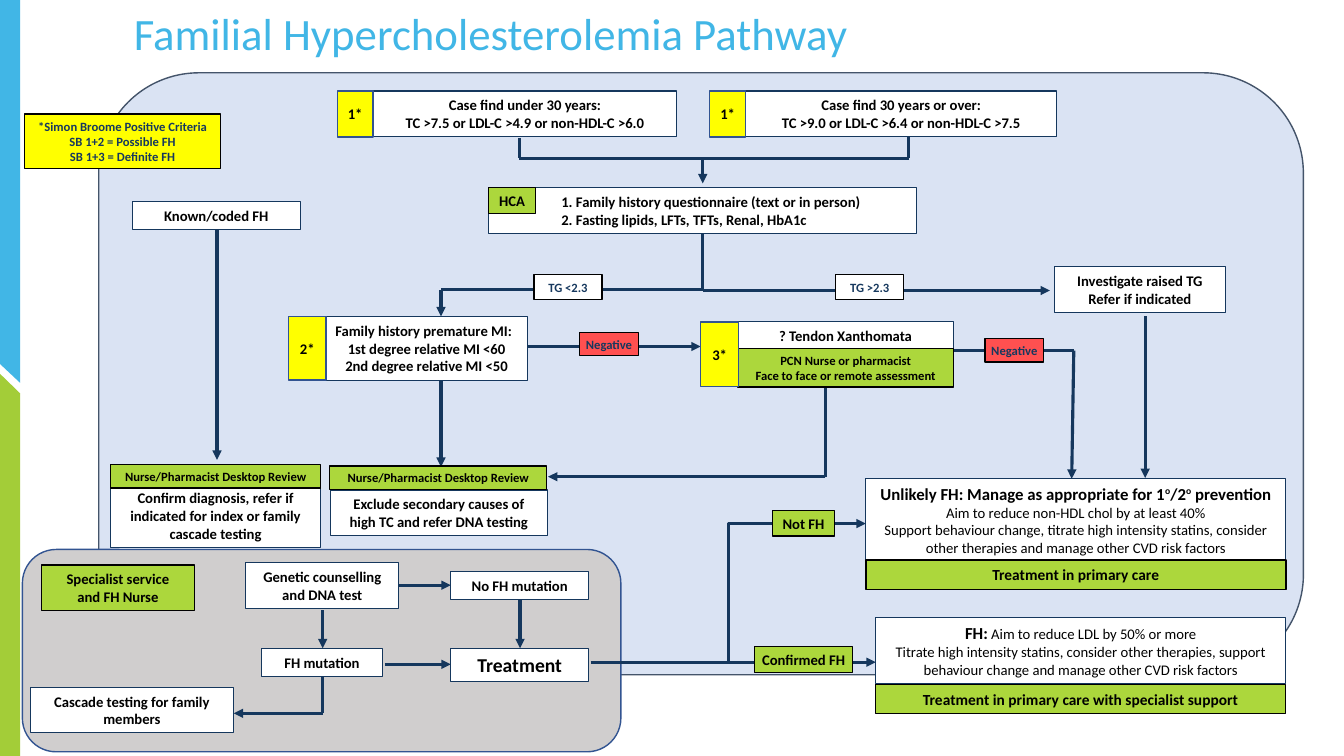
from pptx import Presentation
from pptx.dml.color import RGBColor
from pptx.enum.shapes import MSO_CONNECTOR as LINK, MSO_SHAPE as SHAPE
from pptx.enum.text import MSO_ANCHOR as ANCHOR, PP_ALIGN as ALIGN
from pptx.oxml.ns import qn
from pptx.util import Pt
from lxml.etree import SubElement

COLORS = {
    "white": "FFFFFF", "black": "000000", "sky": "41B6E6", "leaf": "A3CD38",
    "panel": "DAE3F3", "slate": "44546A", "grey": "D0CECE", "blue": "325491",
    "navy": "15375D", "ink": "16385E", "yellow": "FFFF00", "lime": "ACD73C",
    "red": "FF5050",
}

# kind: fill, line, line width, side and top margins, text colour, text size
KINDS = {
    "step": ("white", "navy", 0.75, (7.2, 3.6), "black", 10.5),
    "care": ("lime", "black", 1, (7.2, 3.6), "black", 11),
    "tag": ("lime", "black", 1, (3, 3), "black", 10.5),
    "role": ("lime", "black", 1, (3, 3), "black", 9),
    "key": ("yellow", "black", 1, (3, 3), "ink", 9),
    "number": ("yellow", "blue", 1, (0, 3.6), "black", 10.5),
    "negative": ("red", "black", 1, (3, 3), "ink", 9),
    "level": ("white", "black", 1, (3, 3), "ink", 9),
}


class Pathway:
    font = "Calibri"

    def __init__(self, slide):
        self.shapes = slide.shapes

    def rgb(self, name):
        return RGBColor.from_string(COLORS[name])

    def paint(self, s, fill, line=None, width=1):
        s.shadow.inherit = False
        s.fill.solid()
        s.fill.fore_color.rgb = self.rgb(fill)
        if line:
            s.line.color.rgb = self.rgb(line)
            s.line.width = Pt(width)
        else:
            s.line.fill.background()

    def run(self, p, text, size, color, bold=True, raised=False):
        r = p.add_run()
        r.text = text
        r.font.name, r.font.size, r.font.bold = self.font, Pt(size), bold
        r.font.color.rgb = self.rgb(color)
        if raised:
            r.font._element.set("baseline", "30000")

    def strip(self, color, *points):
        """Filled outline through the given points."""
        points = [(Pt(x), Pt(y)) for x, y in points]
        builder = self.shapes.build_freeform(*points[0])
        builder.add_line_segments(points[1:])
        self.paint(builder.convert_to_shape(), color)

    def panel(self, x, y, w, h, fill, line):
        s = self.shapes.add_shape(SHAPE.ROUNDED_RECTANGLE, Pt(x), Pt(y), Pt(w), Pt(h))
        self.paint(s, fill, line)

    def title(self, x, y, w, h, text):
        tf = self.shapes.add_textbox(Pt(x), Pt(y), Pt(w), Pt(h)).text_frame
        tf.word_wrap = True
        tf.paragraphs[0].line_spacing = 0.9
        self.run(tf.paragraphs[0], text, 32, "sky", bold=False)

    def box(self, kind, x, y, w, h, *paragraphs, aligns=(), left=None):
        """A paragraph is a string or a list of (text, size, bold, raised)."""
        fill, line, width, (side, top), color, size = KINDS[kind]
        s = self.shapes.add_shape(SHAPE.RECTANGLE, Pt(x), Pt(y), Pt(w), Pt(h))
        self.paint(s, fill, line, width)
        tf = s.text_frame
        tf.word_wrap = True
        tf.vertical_anchor = ANCHOR.MIDDLE
        tf.margin_left = Pt(side if left is None else left)
        tf.margin_right = Pt(side)
        tf.margin_top = tf.margin_bottom = Pt(top)
        for i, runs in enumerate(paragraphs):
            p = tf.add_paragraph() if i else tf.paragraphs[0]
            p.alignment = aligns[i] if aligns else ALIGN.CENTER
            if isinstance(runs, str):
                runs = [(runs, size, True, False)]
            for text, run_size, bold, raised in runs:
                self.run(p, text, run_size, color, bold, raised)

    def line(self, start, end, arrow=True, link=LINK.STRAIGHT):
        s = self.shapes.add_connector(link, *map(Pt, start + end))
        s.line.color.rgb = self.rgb("navy")
        s.line.width = Pt(2.25)
        props = s._element.spPr
        if arrow:
            SubElement(props.get_or_add_ln(), qn("a:tailEnd"), type="triangle")
        SubElement(props, qn("a:effectLst"))

    def route(self, *points, arrow=True):
        """Straight lines from point to point, with the arrow on the last."""
        last = len(points) - 2
        for i, (start, end) in enumerate(zip(points, points[1:])):
            self.line(start, end, arrow and i == last)


def main():
    prs = Presentation()
    prs.slide_width, prs.slide_height = Pt(960), Pt(540)
    s = Pathway(prs.slides.add_slide(prs.slide_layouts[6]))

    # Side strips and panels
    s.strip("sky", (0, 0), (14.4, 0), (14.4, 273.5), (0, 260))
    s.strip("leaf", (0, 267), (14.4, 281), (14.4, 540), (0, 540))
    s.panel(70.5, 52, 860.5, 430, "panel", "slate")
    s.panel(16, 392.5, 427.5, 144.5, "grey", "blue")
    s.title(88.5, 4.5, 748, 43, "Familial Hypercholesterolemia Pathway")

    # Case finding to family history
    s.route((371, 98.5), (371, 113), (649, 113), (649, 98), arrow=False)
    s.line((502, 113), (502, 131))
    s.route((502, 166), (502, 207.5), (750, 207.5))
    s.route((502, 207), (315, 207), (315, 226))

    # Assessment to review and treatment
    s.line((155, 164), (155, 328.5))
    s.line((315, 263), (315, 333.5))
    s.line((377, 247.5), (500.5, 247.5))
    s.route((681, 250.5), (767, 250.5), (765.5, 342))
    s.line((818, 226), (818, 341.5))
    s.route((589.5, 276), (589.5, 340.5), (391.5, 340.5))

    # Specialist service
    s.line((285, 418), (322, 418))
    s.line((371.5, 428), (371.5, 463))
    s.line((230.5, 436), (230.5, 463))
    s.line((275, 474.5), (322, 474.5))
    s.route((230.5, 483), (230.5, 509.5), (167, 509.5))
    s.line((422, 473), (618.5, 374), link=LINK.ELBOW)
    s.line((520, 473), (625.5, 473))

    # Case finding
    s.box("key", 17.5, 81.5, 140, 39, "*Simon Broome Positive Criteria",
          "SB 1+2 = Possible FH", "SB 1+3 = Definite FH")
    s.box("step", 267, 65, 216, 32.5, "Case find under 30 years:",
          "TC >7.5 or LDL-C >4.9 or non-HDL-C >6.0")
    s.box("step", 532.5, 65, 222.5, 32.5, "Case find 30 years or over:",
          "TC >9.0 or LDL-C >6.4 or non-HDL-C >7.5")
    s.box("step", 349, 134, 305.5, 32.5,
          "1. Family history questionnaire (text or in person)",
          "2. Fasting lipids, LFTs, TFTs, Renal, HbA1c",
          aligns=[ALIGN.LEFT] * 2, left=52)
    s.box("tag", 349, 134, 33.5, 18.5, "HCA")
    s.box("step", 94.5, 144, 120, 20, "Known/coded FH")

    # Assessment
    s.box("step", 753, 190.5, 122.5, 32.5, "Investigate raised TG", "Refer if indicated")
    s.box("step", 232.5, 226, 144.5, 45.5, "Family history premature MI:",
          "1st degree relative MI <60", "2nd degree relative MI <50",
          aligns=[ALIGN.LEFT, ALIGN.CENTER, ALIGN.CENTER])
    s.box("step", 527, 230, 154, 20, "? Tendon Xanthomata")
    s.box("role", 527, 249, 154, 27.5, "PCN Nurse or pharmacist",
          "Face to face or remote assessment")
    for x, y, w, h, text in [(241, 65, 25.5, 33, "1*"), (507, 65, 25.5, 33, "1*"),
                             (206, 226, 27, 45.5, "2*"), (500.5, 230, 27, 46, "3*")]:
        s.box("number", x, y, w, h, text)
    for x, text in [(381.5, "TG <2.3"), (597, "TG >2.3")]:
        s.box("level", x, 196, 48.5, 18, text)
    for x, y in [(414, 237.5), (703.5, 242)]:
        s.box("negative", x, y, 42, 16.5, "Negative")

    # Desktop reviews
    s.box("step", 79, 345.5, 150, 45.5,
          "Confirm diagnosis, refer if indicated for index or family cascade testing")
    s.box("step", 236, 350, 155, 32.5,
          "Exclude secondary causes of high TC and refer DNA testing")
    for x, y, w in [(79, 332, 150), (235.5, 333, 155)]:
        s.box("role", x, y, w, 16.5, "Nurse/Pharmacist Desktop Review")

    # Specialist service
    s.box("tag", 29.5, 403.5, 109.5, 32.5, "Specialist service", "and FH Nurse")
    s.box("step", 175.5, 402, 109.5, 32.5, "Genetic counselling and DNA test")
    s.box("step", 322, 408.5, 98.5, 20, "No FH mutation")
    s.box("step", 186.5, 463, 87, 20, "FH mutation")
    s.box("step", 322, 463, 98.5, 24, [("Treatment", 14, True, False)])
    s.box("step", 21.5, 491, 145.5, 32.5, "Cascade testing for family members")

    # Treatment in primary care
    s.box("tag", 552, 364.5, 44, 18.5, "Not FH")
    s.box("step", 618.5, 341.5, 300, 59.5,
          [("Unlikely FH: Manage as appropriate for 1", 12, True, False),
           ("o", 12, True, True), ("/2", 12, True, False), ("o", 12, True, True),
           (" prevention", 12, True, False)],
          [("Aim to reduce non-HDL chol by at least 40%", 10.5, False, False)],
          [("Support behaviour change, titrate high intensity statins, consider "
            "other therapies and manage other CVD risk factors", 10.5, False, False)])
    s.box("care", 618.5, 400, 300, 21, "Treatment in primary care")
    s.box("tag", 539, 462, 70, 18.5, "Confirmed FH")
    s.box("step", 625.5, 441, 293, 47.5,
          [("FH:", 12, True, False),
           (" Aim to reduce LDL by 50% or more", 10.5, False, False)],
          [("Titrate high intensity statins, consider other therapies, support "
            "behaviour change and manage other CVD risk factors", 10.5, False, False)])
    s.box("care", 625.5, 489, 293, 20.5, "Treatment in primary care with specialist support")

    prs.save("out.pptx")


if __name__ == "__main__":
    main()
